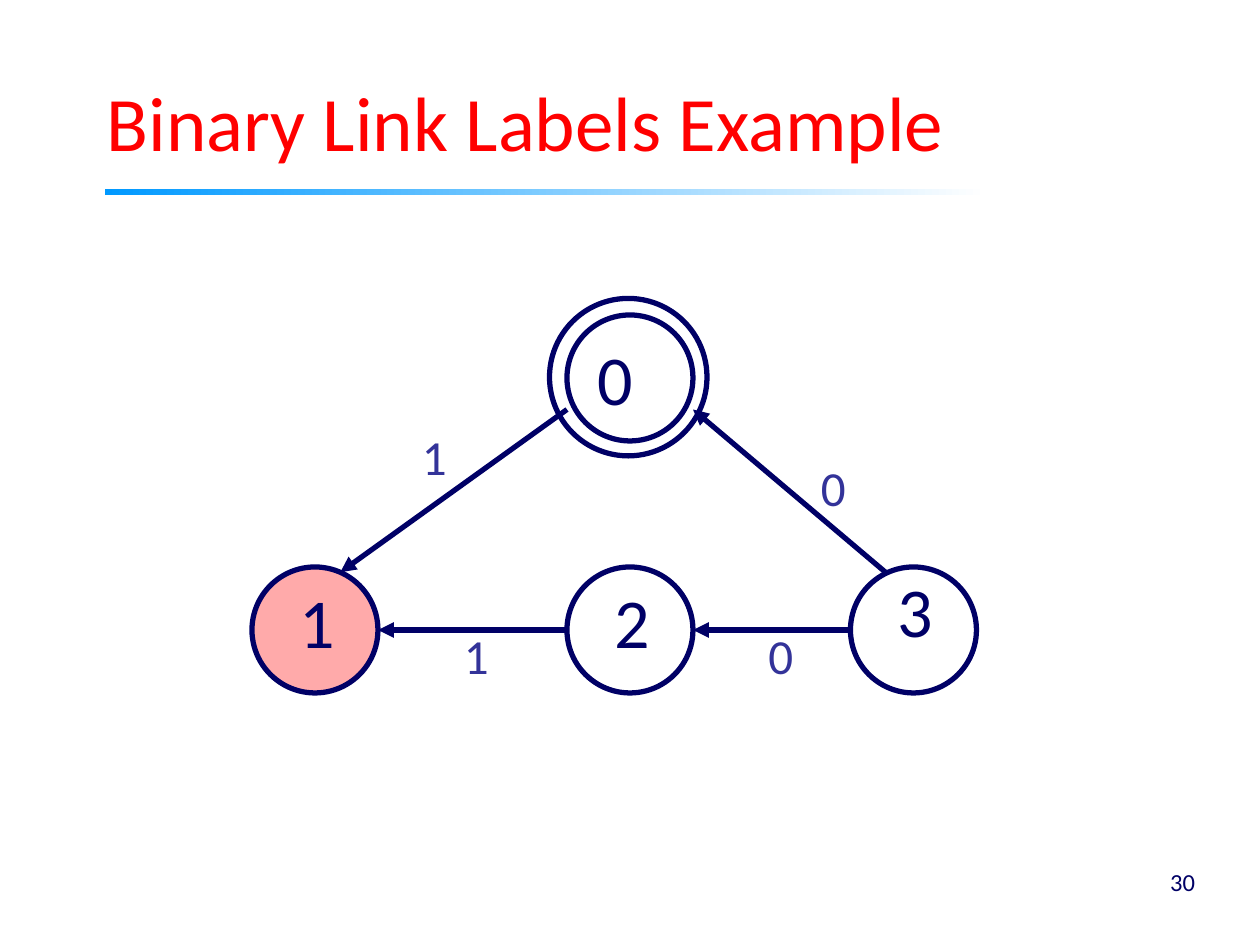
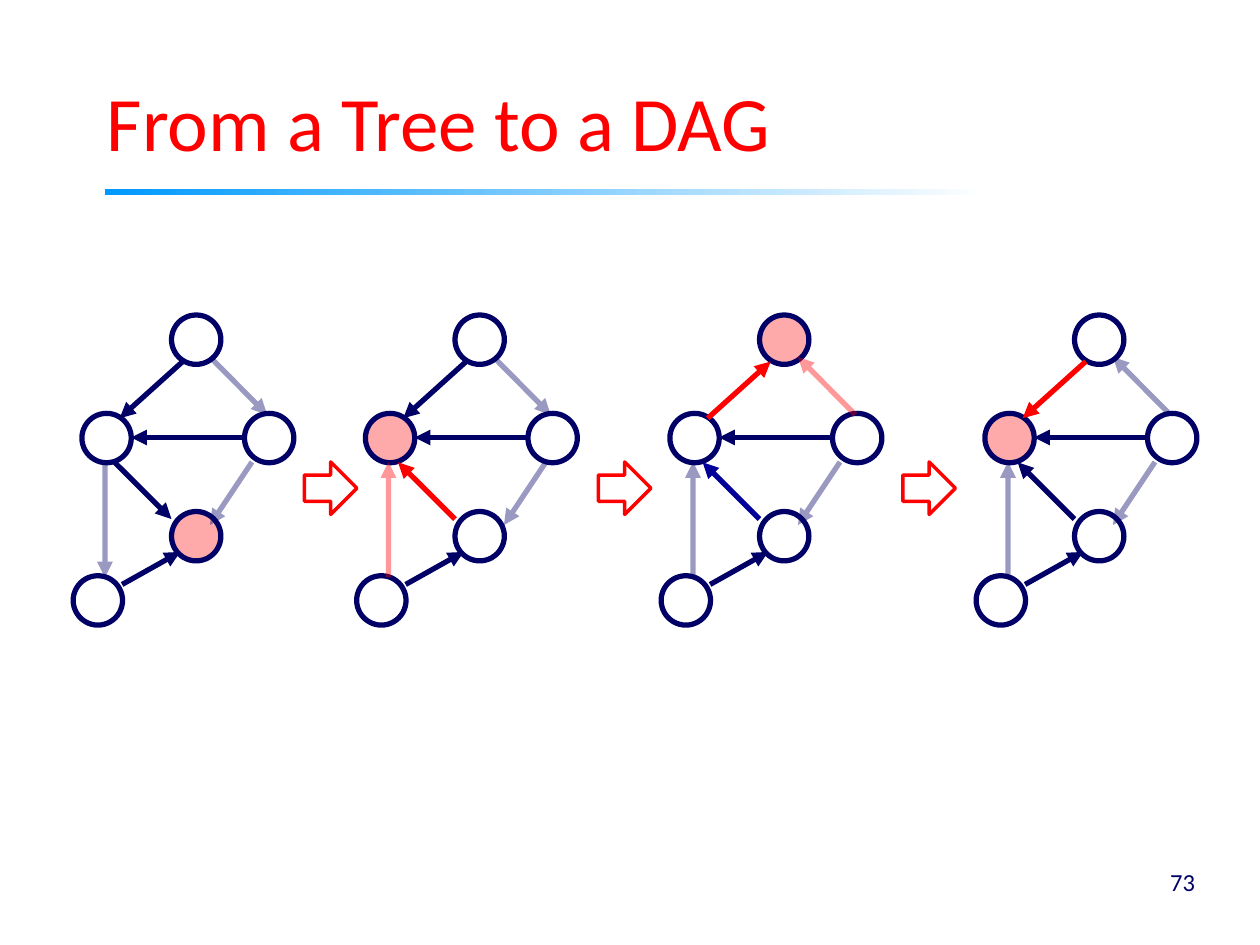
from dataclasses import dataclass

from lxml import etree
from pptx import Presentation
from pptx.dml.color import RGBColor
from pptx.enum.shapes import MSO_CONNECTOR, MSO_SHAPE
from pptx.enum.text import MSO_ANCHOR, MSO_AUTO_SIZE, PP_ALIGN
from pptx.oxml.ns import qn
from pptx.util import Pt

STRAIGHT = MSO_CONNECTOR.STRAIGHT
OVAL, BAR, BLOCK_ARROW = MSO_SHAPE.OVAL, MSO_SHAPE.RECTANGLE, MSO_SHAPE.RIGHT_ARROW
TOP, MIDDLE, BOTTOM = MSO_ANCHOR.TOP, MSO_ANCHOR.MIDDLE, MSO_ANCHOR.BOTTOM
LEFT, RIGHT = PP_ALIGN.LEFT, PP_ALIGN.RIGHT
FIT_SHAPE = MSO_AUTO_SIZE.SHAPE_TO_FIT_TEXT


@dataclass(frozen=True)
class Theme:
    font: str = "Calibri"
    navy: str = "000066"
    blue: str = "000099"
    label: str = "333399"
    red: str = "FF0000"
    pink: str = "FFAAAA"
    white: str = "FFFFFF"
    sky: str = "0099FF"
    title_size: int = 44
    node_size: int = 40
    label_size: int = 28
    number_size: int = 14
    stroke: int = 3
    thin_stroke: int = 2
    faint_alpha: int = 40


class Deck:
    def __init__(self, theme):
        self.theme = theme
        self.presentation = Presentation()
        self.presentation.slide_width = Pt(720)
        self.presentation.slide_height = Pt(540)
        self.page = None

    def add_page(self, title, number):
        theme = self.theme
        self.page = self.presentation.slides.add_slide(self.presentation.slide_layouts[6])
        rule = self.shape(BAR, 60, 108, 504, 3.6)
        rule.fill.gradient()
        rule.fill.gradient_angle = 0
        for stop, color in zip(rule.fill.gradient_stops, (theme.sky, theme.white)):
            stop.color.rgb = RGBColor.from_string(color)
        box = self.text(title, 54, 12, 612, 87, theme.title_size, theme.red, anchor=BOTTOM)
        box.text_frame.word_wrap = True
        self.text(number, 540, 486, 150, 36, theme.number_size, theme.navy,
                  anchor=MIDDLE, align=RIGHT)

    def shape(self, kind, left, top, width, height, line=None, stroke=0, fill=None):
        shape = self.page.shapes.add_shape(kind, Pt(left), Pt(top), Pt(width), Pt(height))
        shape.shadow.inherit = False
        if fill:
            shape.fill.solid()
            shape.fill.fore_color.rgb = RGBColor.from_string(fill)
        else:
            shape.fill.background()
        if line:
            shape.line.color.rgb = RGBColor.from_string(line)
            shape.line.width = Pt(stroke)
        else:
            shape.line.fill.background()
        return shape

    def node(self, left, top, diameter, fill=None):
        return self.shape(OVAL, left, top, diameter, diameter,
                          self.theme.navy, self.theme.stroke, fill)

    def set_words(self, shape, words, size, color, anchor=TOP, align=LEFT):
        frame = shape.text_frame
        frame.text = words
        frame.word_wrap = False
        frame.vertical_anchor = anchor
        paragraph = frame.paragraphs[0]
        paragraph.alignment = align
        font = paragraph.runs[0].font
        font.name, font.size = self.theme.font, Pt(size)
        font.color.rgb = RGBColor.from_string(color)

    def text(self, words, left, top, width, height, size, color, anchor=TOP, align=LEFT):
        box = self.page.shapes.add_textbox(Pt(left), Pt(top), Pt(width), Pt(height))
        self.set_words(box, words, size, color, anchor, align)
        return box

    def tag(self, words, left, top, width, height, size, color):
        """Add a caption whose box hugs its text."""
        box = self.text(words, left, top, width, height, size, color)
        box.text_frame.auto_size = FIT_SHAPE

    def arrow(self, start, end, color=None, faint=False):
        link = self.page.shapes.add_connector(STRAIGHT, *map(Pt, (*start, *end)))
        link.line.color.rgb = RGBColor.from_string(color or self.theme.navy)
        link.line.width = Pt(self.theme.stroke)
        properties = link._element.spPr
        outline = properties.find(qn("a:ln"))
        if faint:
            tint = outline.find(".//" + qn("a:srgbClr"))
            etree.SubElement(tint, qn("a:alpha"), val=str(self.theme.faint_alpha * 1000))
        etree.SubElement(outline, qn("a:tailEnd"), type="triangle")
        etree.SubElement(properties, qn("a:effectLst"))


def add_link_labels(deck):
    theme = deck.theme
    deck.add_page("Binary Link Labels Example", "30")
    root = deck.node(324, 180, 72)
    deck.set_words(root, "0", theme.node_size, theme.navy, anchor=MIDDLE)
    for left, fill in ((324, None), (144, theme.pink), (486, None)):
        deck.node(left, 324, 72, fill)
    for name, left, top, width in (("1", 164, 327, 29), ("2", 344, 327, 33),
                                   ("3", 506, 320.5, 34)):
        deck.tag(name, left, top, width, 55.5, theme.node_size, theme.navy)
    for start, end in (((506, 327), (396, 234)), ((324, 234), (194.5, 327)),
                       ((324, 360), (216, 360)), ((486, 360), (396, 360))):
        deck.arrow(start, end)
    deck.node(314, 170.5, 90)
    for bit, left, top, width in (("0", 462, 258, 30), ("0", 432, 354, 30),
                                  ("1", 234, 240, 24.5), ("1", 258, 354, 24.5)):
        deck.tag(bit, left, top, width, 41, theme.label_size, theme.label)


NODE_DIAMETER = 28.2
NODES = {"top": (98, 180), "right": (139.7, 236.2), "left": (46.8, 236.2),
         "low": (98, 292.3), "base": (41.8, 329)}
EDGES = {
    "top-left": ((104.4, 206.6), (68.4, 239)),
    "right-left": ((139.7, 250), (74.9, 250)),
    "left-low": ((65.5, 264.2), (98, 296.6)),
    "base-low": ((69.8, 334), (103, 315.4)),
    "left-base": ((60, 264), (60, 330)),
    "right-low": ((144, 264), (120, 300)),
    "top-right": ((120, 204), (152.7, 237)),
}
FAINT = {"left-base", "right-low", "top-right"}
DRAW_ORDER = ("top", "right", "left", "top-left", "right-left", "left-low",
              "low", "base", "base-low", "left-base", "right-low", "top-right")


@dataclass(frozen=True)
class Step:
    """One state of the graph: where it sits and what changed in it."""
    left: float
    active: str
    reversed_edges: tuple = ()
    red_edges: tuple = ()
    blue_edges: tuple = ()
    right_low_shift: float = 0


STEPS = (
    Step(0, "low"),
    Step(162, "left", ("left-low", "left-base"), ("left-low", "left-base"),
         right_low_shift=6),
    Step(336, "top", ("left-low", "left-base", "top-left", "top-right"),
         ("top-left", "top-right"), ("left-low",)),
    Step(516, "left", ("left-low", "left-base", "top-right"), ("top-left",)),
)


def draw_step(deck, step):
    theme = deck.theme
    for name in DRAW_ORDER:
        if name in NODES:
            left, top = NODES[name]
            fill = theme.white if name == "low" else None
            if name == step.active:
                fill = theme.pink
            deck.node(step.left + left, top, NODE_DIAMETER, fill)
            continue
        shift = step.left + (step.right_low_shift if name == "right-low" else 0)
        ends = [(x + shift, y) for x, y in EDGES[name]]
        if name in step.reversed_edges:
            ends.reverse()
        color = theme.navy
        if name in step.red_edges:
            color = theme.red
        elif name in step.blue_edges:
            color = theme.blue
        deck.arrow(*ends, color, name in FAINT)


def add_tree_to_dag(deck):
    deck.add_page("From a Tree to a DAG", "73")
    for step in STEPS:
        draw_step(deck, step)
    for left in (174, 342, 516):
        deck.shape(BLOCK_ARROW, left, 264, 30, 30, deck.theme.red, deck.theme.thin_stroke)


def main():
    deck = Deck(Theme())
    add_link_labels(deck)
    add_tree_to_dag(deck)
    deck.presentation.save("out.pptx")


if __name__ == "__main__":
    main()
